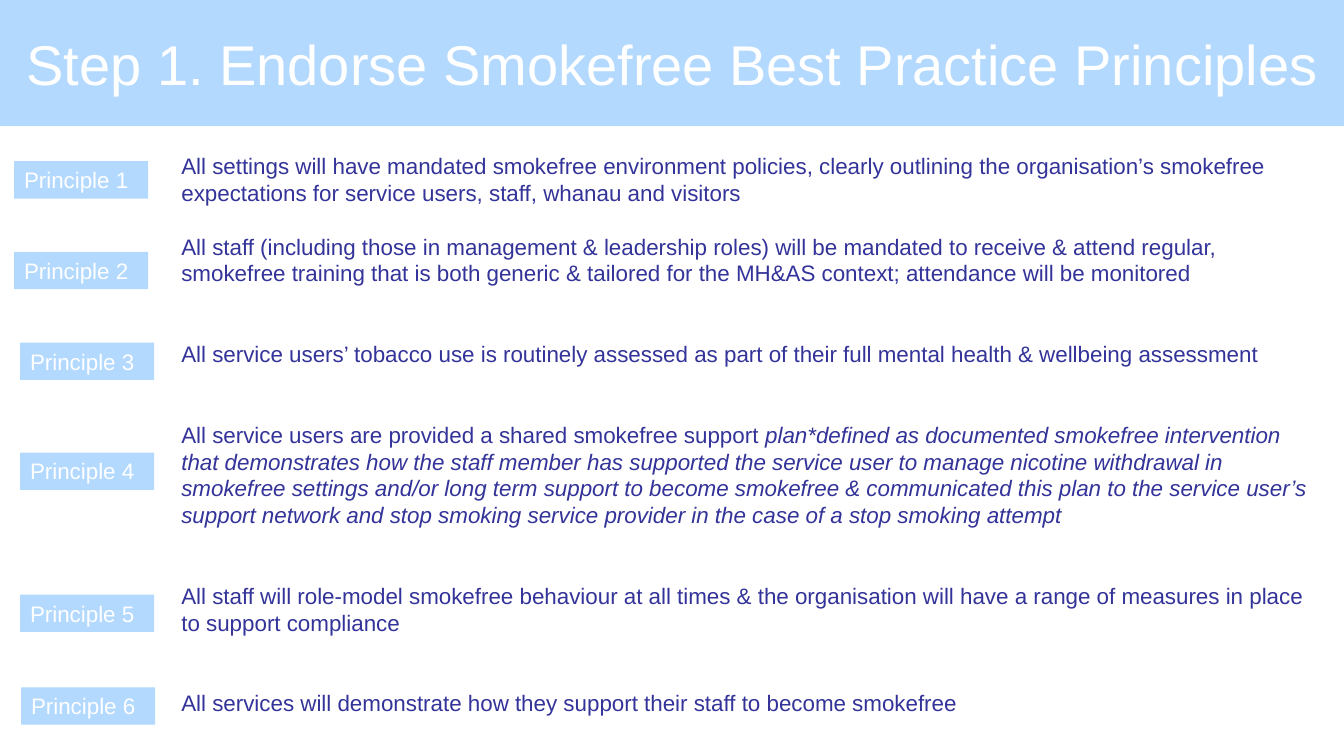
from pptx import Presentation
from pptx.dml.color import RGBColor
from pptx.enum.shapes import MSO_SHAPE
from pptx.enum.text import MSO_ANCHOR, PP_ALIGN
from pptx.util import Inches, Pt

RECTANGLE = MSO_SHAPE.RECTANGLE
MIDDLE, TOP = MSO_ANCHOR.MIDDLE, MSO_ANCHOR.TOP
LEFT, CENTER = PP_ALIGN.LEFT, PP_ALIGN.CENTER


class Theme:
    font = "Arial"
    band = RGBColor.from_string("B3D9FF")
    light = RGBColor.from_string("FFFFFF")
    ink = RGBColor.from_string("333399")
    title_size = Pt(40)
    body_size = Pt(16)
    blank_line = 19.2


PRINCIPLES = [
    (0.14, 1.6, 0, "All settings will have mandated smokefree environment policies, clearly outlining "
     "the organisation’s smokefree expectations for service users, staff, whanau and visitors", ""),
    (0.14, 2.5, 1, "All staff (including those in management & leadership roles) will be mandated to "
     "receive & attend regular, smokefree training that is both generic & tailored for the MH&AS "
     "context; attendance will be monitored", ""),
    (0.2, 3.4, 2, "All service users’ tobacco use is routinely assessed as part of their full mental "
     "health & wellbeing assessment", ""),
    (0.2, 4.49, 2, "All service users are provided a shared smokefree support ",
     "plan*defined as documented smokefree intervention that demonstrates how the staff member has "
     "supported the service user to manage nicotine withdrawal in smokefree settings and/or long term "
     "support to become smokefree & communicated this plan to the service user’s support network and "
     "stop smoking service provider in the case of a stop smoking attempt"),
    (0.2, 5.9, 2, "All staff will role-model smokefree behaviour at all times & the organisation will "
     "have a range of measures in place to support compliance", ""),
    (0.21, 6.82, 2, "All services will demonstrate how they support their staff to become smokefree", ""),
]


class SlideBuilder:
    """Draws styled elements on one slide."""

    def __init__(self, page, theme):
        self.page, self.theme = page, theme

    def add_text(self, para, text, color, size, italic=False):
        span = para.add_run()
        span.text = text
        formats = {"name": self.theme.font, "size": size, "bold": False, "italic": italic}
        for key, value in formats.items():
            setattr(span.font, key, value)
        span.font.color.rgb = color

    def frame(self, box, anchor):
        formats = {
            "word_wrap": True, "vertical_anchor": anchor,
            "margin_left": Inches(0.1), "margin_right": Inches(0.1),
            "margin_top": Inches(0.05), "margin_bottom": Inches(0.05),
        }
        for key, value in formats.items():
            setattr(box.text_frame, key, value)
        return box.text_frame

    def fill(self, box):
        box.fill.solid()
        box.fill.fore_color.rgb = self.theme.band
        box.line.fill.background()

    def title(self, text, width, height):
        box = self.page.shapes.title
        formats = {"left": 0, "top": 0, "width": Inches(width), "height": Inches(height)}
        for key, value in formats.items():
            setattr(box, key, value)
        self.fill(box)
        para = self.frame(box, MIDDLE).paragraphs[0]
        para.alignment = CENTER
        self.add_text(para, text, self.theme.light, self.theme.title_size)

    def label(self, text, left, top):
        box = self.page.shapes.add_shape(
            RECTANGLE, Inches(left), Inches(top), Inches(1.33), Inches(0.37))
        box.shadow.inherit = False
        self.fill(box)
        para = self.frame(box, TOP).paragraphs[0]
        para.alignment = LEFT
        self.add_text(para, text, self.theme.light, self.theme.body_size)

    def statements(self, principles):
        box = self.page.shapes.add_textbox(
            Inches(1.7), Inches(1.46), Inches(11.51), Inches(5.76))
        frame = self.frame(box, TOP)
        for index, (_, _, gap, plain, slanted) in enumerate(principles):
            para = frame.add_paragraph() if index else frame.paragraphs[0]
            para.space_before = Pt(gap * self.theme.blank_line)
            self.add_text(para, plain, self.theme.ink, self.theme.body_size)
            if slanted:
                self.add_text(para, slanted, self.theme.ink, self.theme.body_size, True)


def main():
    deck = Presentation()
    deck.slide_width, deck.slide_height = Inches(13.33), Inches(7.5)
    builder = SlideBuilder(deck.slides.add_slide(deck.slide_layouts[5]), Theme)
    builder.title("Step 1. Endorse Smokefree Best Practice Principles", 13.33, 1.25)
    builder.statements(PRINCIPLES)
    for number, (left, top, *_) in enumerate(PRINCIPLES, 1):
        builder.label(f"Principle {number}", left, top)
    deck.save("out.pptx")


if __name__ == "__main__":
    main()
